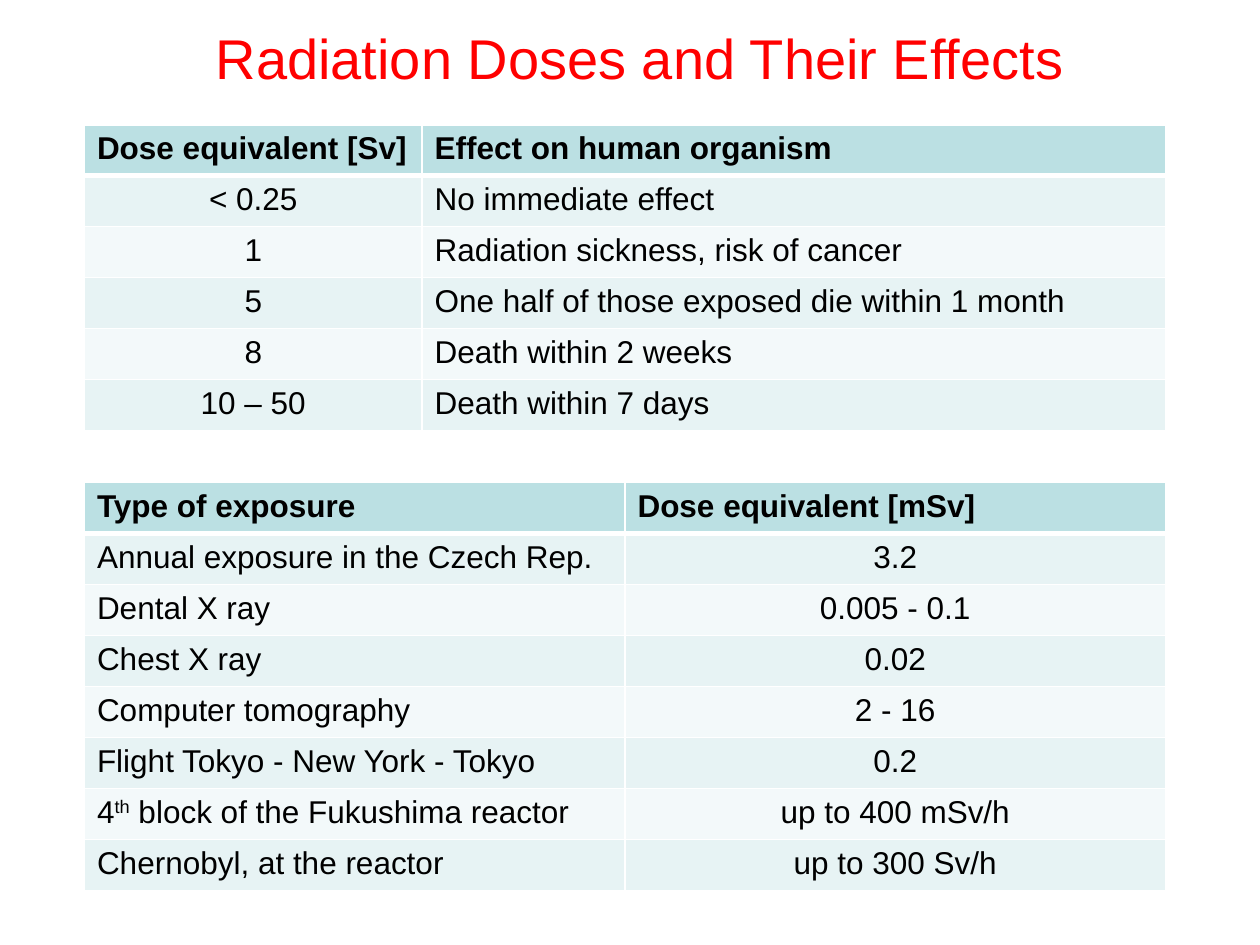
from lxml.etree import SubElement
from pptx import Presentation
from pptx.dml.color import RGBColor
from pptx.enum.text import MSO_ANCHOR, MSO_AUTO_SIZE, PP_ALIGN
from pptx.oxml.ns import qn
from pptx.util import Inches, Pt


def rgb(value):
    return RGBColor.from_string(value)


class SlideBuilder:
    font = "Arial"
    header_fill = "BBE0E3"
    band_fills = ("E7F3F4", "F3F9FA")
    border = "FFFFFF"

    def __init__(self, prs):
        self.s = prs.slides.add_slide(prs.slide_layouts[6])

    def add_text(self, p, text, size, color, bold=False, align=PP_ALIGN.LEFT):
        p.alignment = align
        for i, part in enumerate(text.split("^")):
            r = p.add_run()
            r.text = part
            for name, value in {"name": self.font, "size": Pt(size), "bold": bold}.items():
                setattr(r.font, name, value)
            r.font.color.rgb = rgb(color)
            if i % 2:
                r._r.get_or_add_rPr().set("baseline", "30000")

    def title(self, text, left, top, width, height):
        sp = self.s.shapes.add_textbox(Inches(left), Inches(top), Inches(width), Inches(height))
        tf = sp.text_frame
        style = {
            "word_wrap": True,
            "auto_size": MSO_AUTO_SIZE.SHAPE_TO_FIT_TEXT,
            "vertical_anchor": MSO_ANCHOR.BOTTOM,
        }
        for name, value in style.items():
            setattr(tf, name, value)
        self.add_text(tf.paragraphs[0], text, 32, "FF0000", align=PP_ALIGN.CENTER)

    def borders(self, cell, row):
        tcPr = cell._tc.get_or_add_tcPr()
        widths = {"lnL": 1, "lnR": 1, "lnT": 3 if row == 1 else 1, "lnB": 3 if row == 0 else 1}
        for tag, width in widths.items():
            ln = SubElement(tcPr, qn(f"a:{tag}"), w=str(Pt(width)))
            fill = SubElement(ln, qn("a:solidFill"))
            SubElement(fill, qn("a:srgbClr"), val=self.border)

    def table(self, rows, left, top, col_widths, row_height, centered):
        frame = self.s.shapes.add_table(
            len(rows), len(col_widths), Inches(left), Inches(top),
            Inches(sum(col_widths)), Inches(row_height * len(rows)),
        )
        table = frame.table
        for col, width in zip(table.columns, col_widths):
            col.width = Inches(width)
        for i, row in enumerate(rows):
            table.rows[i].height = Inches(row_height)
            for j, text in enumerate(row):
                cell = table.cell(i, j)
                self.borders(cell, i)
                cell.fill.solid()
                cell.fill.fore_color.rgb = rgb(self.band_fills[(i - 1) % 2] if i else self.header_fill)
                align = PP_ALIGN.CENTER if i and j == centered else PP_ALIGN.LEFT
                self.add_text(cell.text_frame.paragraphs[0], text, 18, "000000", i == 0, align)


EXPOSURES = [
    ("Type of exposure", "Dose equivalent [mSv]"),
    ("Annual exposure in the Czech Rep.", "3.2"),
    ("Dental X ray", "0.005 - 0.1"),
    ("Chest X ray", "0.02"),
    ("Computer tomography", "2 - 16"),
    ("Flight Tokyo - New York - Tokyo", "0.2"),
    ("4^th^ block of the Fukushima reactor", "up to 400 mSv/h"),
    ("Chernobyl, at the reactor", "up to 300 Sv/h"),
]
EFFECTS = [
    ("Dose equivalent [Sv]", "Effect on human organism"),
    ("< 0.25", "No immediate effect"),
    ("1", "Radiation sickness, risk of cancer"),
    ("5", "One half of those exposed die within 1 month"),
    ("8", "Death within 2 weeks"),
    ("10 – 50", "Death within 7 days"),
]


def main():
    prs = Presentation()
    prs.slide_width = Inches(10)
    prs.slide_height = Inches(7.5)
    slide = SlideBuilder(prs)
    row_height = 3.24 / len(EXPOSURES)
    slide.table(EXPOSURES, 0.67, 3.83, (4.29, 4.29), row_height, centered=1)
    slide.table(EFFECTS, 0.67, 0.99, (2.68, 5.9), row_height, centered=0)
    slide.title("Radiation Doses and Their Effects", 1.3, 0.13, 7.56, 0.64)
    prs.save("out.pptx")


if __name__ == "__main__":
    main()
